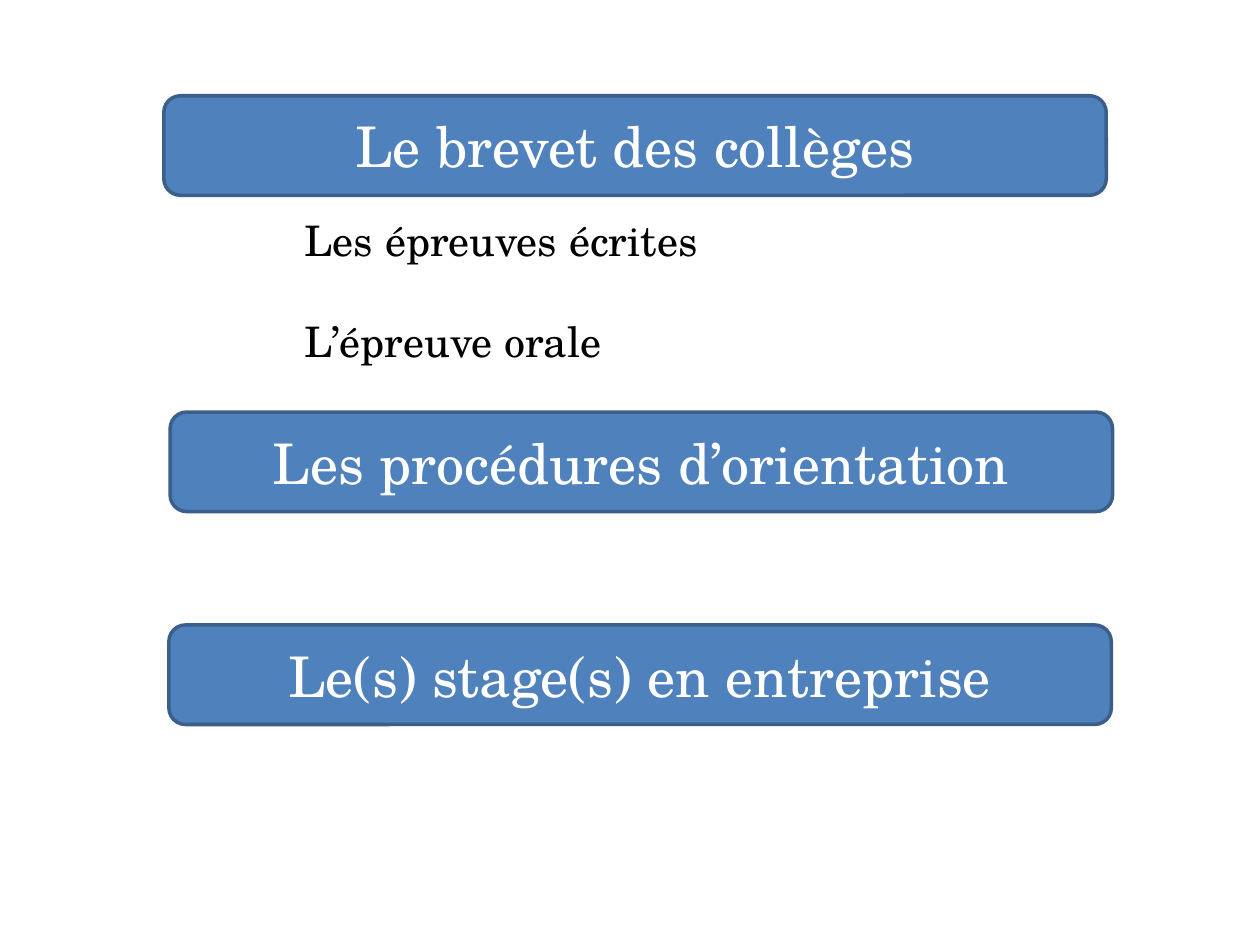
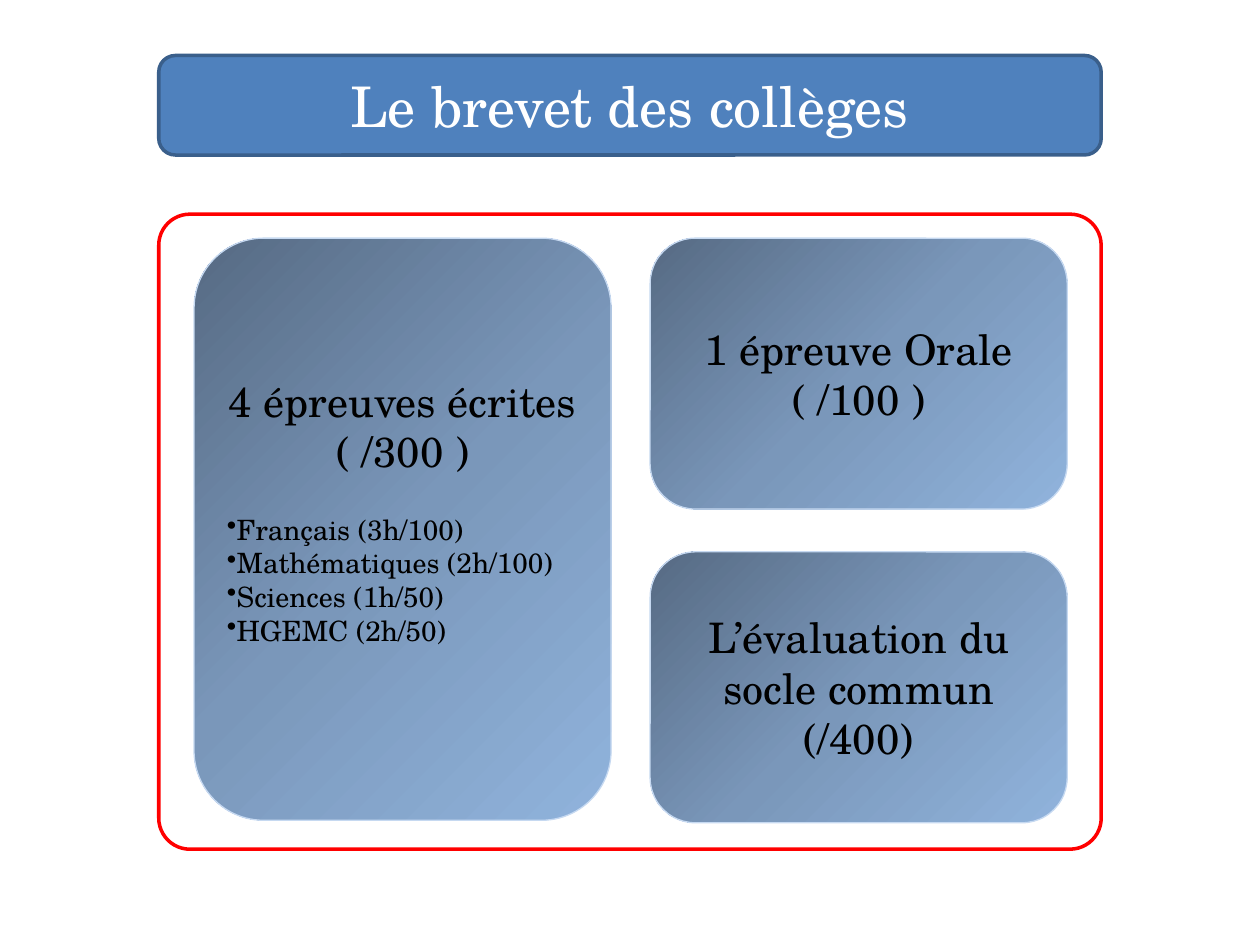
from dataclasses import dataclass

from lxml import etree
from pptx import Presentation
from pptx.dml.color import RGBColor
from pptx.enum.shapes import MSO_SHAPE as Shape
from pptx.enum.text import MSO_ANCHOR as Anchor, MSO_AUTO_SIZE as AutoSize, PP_ALIGN as Align
from pptx.oxml import parse_xml
from pptx.oxml.ns import nsdecls, qn
from pptx.util import Inches, Pt


@dataclass(frozen=True)
class Theme:
    font: str = "TeX Gyre Schola"
    banner: str = "4F81BD"
    banner_line: str = "3A5F8B"
    card_stops: tuple = ((0, "566A83"), (50, "7A97BA"), (100, "90B3DC"))
    card_line: str = "C6D9F1"
    frame: str = "FF0000"
    light: str = "FFFFFF"
    dark: str = "000000"
    banner_size: int = 32
    text_size: int = 24
    detail_size: int = 16


THEME = Theme()
BANNER_WIDTH, BANNER_HEIGHT = 7.48, 0.79
CORNER = 0.167

# Agenda: text, left, top
AGENDA_TITLE = ("Le brevet des collèges", 1.3, 0.76)
AGENDA_BANNERS = [
    ("Les procédures d’orientation", 1.35, 3.27),
    ("Le(s) stage(s) en entreprise", 1.34, 4.96),
]
AGENDA_EXAMS = ["Les épreuves écrites", "L’épreuve orale"]
EXAMS_BOX = (2.32, 1.65, 6.85, 1.5)

# Exam: headings, bulleted subjects, column, top, height
EXAM_TITLE = ("Le brevet des collèges", 1.26, 0.44)
EXAM_CARDS = [
    (["4 épreuves écrites", "( /300 )"],
     ["Français (3h/100)", "Mathématiques (2h/100)", "Sciences (1h/50)", "HGEMC (2h/50)"],
     0, 1.89, 4.62),
    (["1 épreuve Orale", "( /100 )"], [], 1, 1.89, 2.15),
    (["L’évaluation du socle commun", "(/400)"], [], 1, 4.38, 2.15),
]
CARD_LEFT, CARD_WIDTH, CARD_PITCH = 1.54, 3.31, 3.62
SUBJECT_GAP = 0.29
FRAME_BOX = (1.26, 1.7, 7.48, 5.04)


def color(value):
    return RGBColor.from_string(value)


def place(shape, box):
    shape.left, shape.top, shape.width, shape.height = map(Inches, box)


def add_rounded(slide, box, line, line_width, corner=CORNER):
    shape = slide.shapes.add_shape(Shape.ROUNDED_RECTANGLE, *map(Inches, box))
    shape.shadow.inherit = False
    shape.adjustments[0] = corner
    shape.line.color.rgb = color(line)
    shape.line.width = Pt(line_width)
    return shape


def write(frame, lines, size, ink, align, gap=0):
    """Fill the text frame with one paragraph per line, gap inches apart."""
    frame.word_wrap = True
    frame.auto_size = AutoSize.NONE
    for index, line in enumerate(lines):
        paragraph = frame.paragraphs[0] if index == 0 else frame.add_paragraph()
        paragraph.text = line
        format_paragraph(paragraph, size, ink, align)
        paragraph.space_before = Inches(gap if index else 0)


def format_paragraph(paragraph, size, ink, align):
    paragraph.alignment = align
    paragraph.font.name = THEME.font
    paragraph.font.size = Pt(size)
    paragraph.font.color.rgb = color(ink)


def add_banner(slide, text, left, top, is_title=False):
    """Add a blue banner; a title's text goes in the title placeholder over it."""
    box = (left, top, BANNER_WIDTH, BANNER_HEIGHT)
    holder = add_rounded(slide, box, THEME.banner_line, 2)
    holder.fill.solid()
    holder.fill.fore_color.rgb = color(THEME.banner)
    if is_title:
        banner, holder = holder, slide.shapes.title
        place(holder, box)
        banner.element.addnext(holder.element)
    holder.text_frame.vertical_anchor = Anchor.MIDDLE
    write(holder.text_frame, [text], THEME.banner_size, THEME.light, Align.CENTER)


def fill_from_corner(shape):
    """Fill with the card gradient, spreading from the top left corner."""
    stops = "".join(
        f'<a:gs pos="{position * 1000}"><a:srgbClr val="{value}"/></a:gs>'
        for position, value in THEME.card_stops)
    gradient = parse_xml(
        f'<a:gradFill {nsdecls("a")} rotWithShape="1"><a:gsLst>{stops}</a:gsLst>'
        '<a:path path="circle"><a:fillToRect r="100000" b="100000"/></a:path>'
        '</a:gradFill>')
    shape.element.spPr.find(qn("a:prstGeom")).addnext(gradient)


def set_bullet(paragraph, character=None):
    properties = paragraph._p.get_or_add_pPr()
    properties.set("marL", "0")
    properties.set("indent", "0")
    if character:
        etree.SubElement(properties, qn("a:buChar")).set("char", character)
    else:
        etree.SubElement(properties, qn("a:buNone"))
    # Bullet elements come before the default run properties
    defaults = properties.find(qn("a:defRPr"))
    if defaults is not None:
        properties.append(defaults)


def add_card(slide, headings, subjects, column, top, height):
    box = (CARD_LEFT + column * CARD_PITCH, top, CARD_WIDTH, height)
    card = add_rounded(slide, box, THEME.card_line, 0.75)
    fill_from_corner(card)
    frame = card.text_frame
    frame.vertical_anchor = Anchor.MIDDLE
    write(frame, headings, THEME.text_size, THEME.dark, Align.CENTER)
    for index, subject in enumerate(subjects):
        paragraph = frame.add_paragraph()
        paragraph.text = subject
        format_paragraph(paragraph, THEME.detail_size, THEME.dark, Align.LEFT)
        paragraph.space_before = Inches(0 if index else SUBJECT_GAP)
        set_bullet(paragraph, "•")
    if subjects:
        frame.margin_bottom = Inches(0.05 + SUBJECT_GAP)


def build_agenda(presentation):
    slide = presentation.slides.add_slide(presentation.slide_layouts[1])
    body = slide.placeholders[1]
    place(body, EXAMS_BOX)
    body.text_frame.vertical_anchor = Anchor.TOP
    write(body.text_frame, AGENDA_EXAMS, THEME.text_size, THEME.dark, Align.LEFT, gap=0.4)
    for paragraph in body.text_frame.paragraphs:
        set_bullet(paragraph)
    add_banner(slide, *AGENDA_TITLE, is_title=True)
    for banner in AGENDA_BANNERS:
        add_banner(slide, *banner)


def build_exam(presentation):
    slide = presentation.slides.add_slide(presentation.slide_layouts[5])
    add_banner(slide, *EXAM_TITLE, is_title=True)
    for card in EXAM_CARDS:
        add_card(slide, *card)
    frame = add_rounded(slide, FRAME_BOX, THEME.frame, 2, corner=0.049)
    frame.fill.background()


def main():
    presentation = Presentation()
    presentation.slide_width, presentation.slide_height = Inches(10), Inches(7.5)
    build_agenda(presentation)
    build_exam(presentation)
    presentation.save("out.pptx")


if __name__ == "__main__":
    main()
